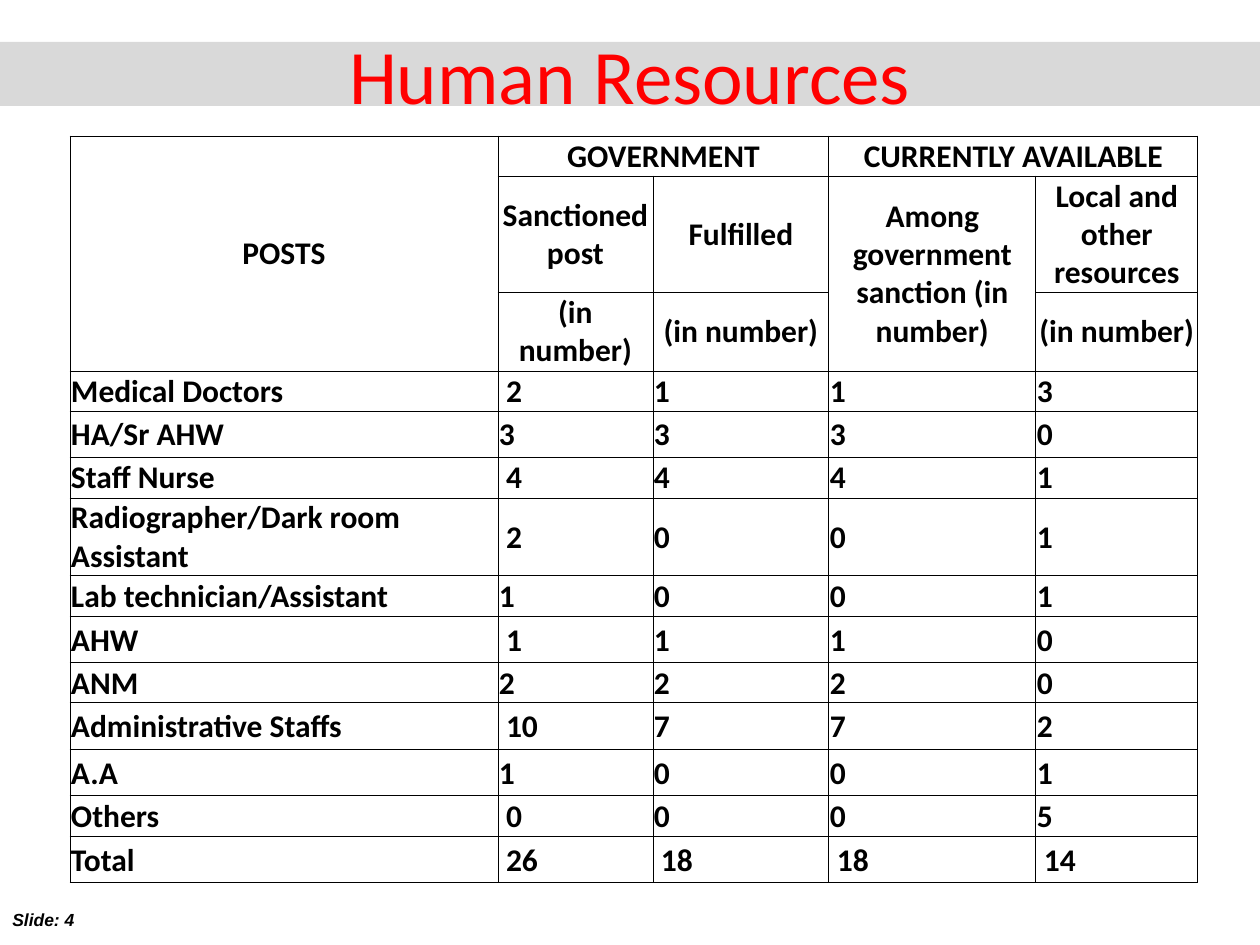
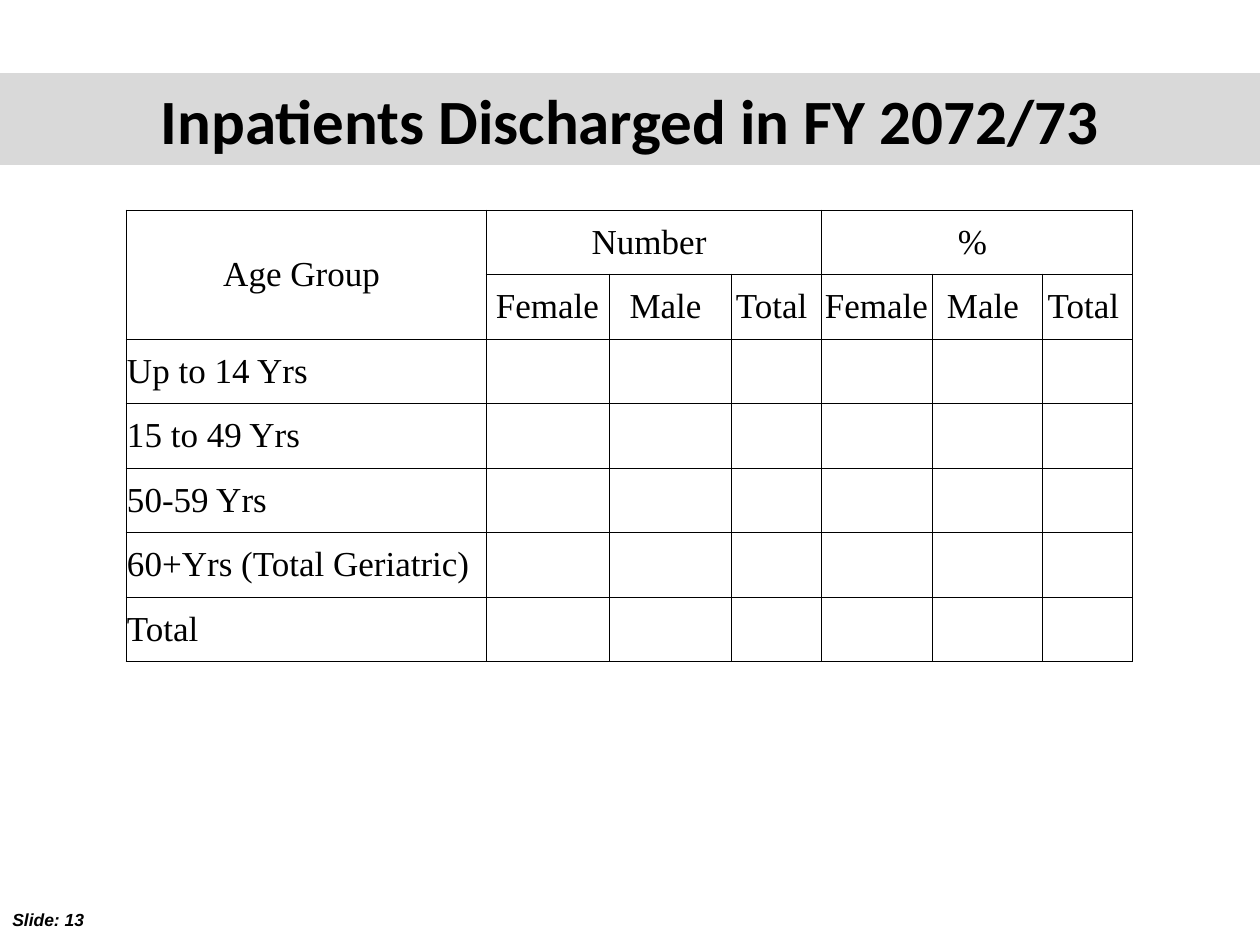
from lxml import etree
from pptx import Presentation
from pptx.dml.color import RGBColor
from pptx.enum.shapes import MSO_SHAPE
from pptx.enum.text import MSO_ANCHOR, PP_ALIGN
from pptx.oxml.ns import qn
from pptx.util import Pt

RECT = MSO_SHAPE.RECTANGLE
MIDDLE = MSO_ANCHOR.MIDDLE
LEFT, CENTER = PP_ALIGN.LEFT, PP_ALIGN.CENTER
PX = 914400 / 126
BLACK, RED, BAND_GRAY = "000000", "FF0000", "D9D9D9"

# Merges are (first row, first column, last row, last column).
SLIDES = [
    dict(
        number=4, title="Human Resources", band=(42, 64),
        title_font=("Calibri", 44, False, RED),
        table_font=("Calibri", 18, True, BLACK),
        left=70, top=136, header_rows=3,
        widths=[428, 155, 176, 207, 162],
        heights=[40, 116, 79, 40, 46, 41, 78, 41, 46, 40, 47, 46, 41, 46],
        merges=[(0, 0, 2, 0), (0, 1, 0, 2), (0, 3, 0, 4), (1, 3, 2, 3)],
        rows=[
            ["POSTS", "GOVERNMENT", "", "CURRENTLY AVAILABLE", ""],
            ["", "Sanctioned post", "Fulfilled",
             "Among government sanction (in number)", "Local and other resources"],
            ["", "(in number)", "(in number)", "", "(in number)"],
            ["Medical Doctors", " 2", "1", "1", "3"],
            ["HA/Sr AHW", "3", "3", "3", "0"],
            ["Staff Nurse", " 4", "4", "4", "1"],
            ["Radiographer/Dark room Assistant", " 2", "0", "0", "1"],
            ["Lab technician/Assistant", "1", "0", "0", "1"],
            ["AHW", " 1", "1", "1", "0"],
            ["ANM", "2", "2", "2", "0"],
            ["Administrative Staffs", " 10", "7", "7", "2"],
            ["A.A", "1", "0", "0", "1"],
            ["Others", " 0", "0", "0", "5"],
            ["Total", " 26", " 18", " 18", " 14"],
        ],
    ),
    dict(
        number=13, title="Inpatients Discharged in FY 2072/73", band=(73, 92),
        title_font=("Calibri", 36, True, BLACK),
        table_font=("Times New Roman", 20, False, BLACK),
        left=126, top=210, header_rows=2,
        widths=[360, 123, 122, 90, 111, 111, 90],
        heights=[64, 65, 64, 65, 64, 65, 64],
        merges=[(0, 0, 1, 0), (0, 1, 0, 3), (0, 4, 0, 6)],
        rows=[
            ["Age Group ", "Number ", "", "", "% ", "", ""],
            ["", "Female", "Male ", "Total ", "Female ", "Male ", "Total "],
            ["Up to 14 Yrs"] + [""] * 6,
            ["15 to 49 Yrs"] + [""] * 6,
            ["50-59 Yrs"] + [""] * 6,
            ["60+Yrs (Total Geriatric)"] + [""] * 6,
            ["Total"] + [""] * 6,
        ],
    ),
]


def px(n):
    return round(n * PX)


def write(tf, text, font, align=LEFT, italic=False):
    name, size, bold, color = font
    tf.text = text
    p = tf.paragraphs[0]
    p.alignment = align
    f = p.font
    f.name, f.size, f.bold, f.italic = name, Pt(size), bold, italic
    f.color.rgb = RGBColor.from_string(color)


prs = Presentation()
prs.slide_width, prs.slide_height = px(1260), px(945)

for page in SLIDES:
    s = prs.slides.add_slide(prs.slide_layouts[6])

    footer = s.shapes.add_textbox(0, px(903), px(116), px(34))
    footer.text_frame.word_wrap = True
    write(footer.text_frame, f"Slide: {page['number']}", ("Arial", 10, True, BLACK), italic=True)

    band_top, band_height = page["band"]
    band = s.shapes.add_shape(RECT, 0, px(band_top), px(1260), px(band_height))
    band.shadow.inherit = False
    band.fill.solid()
    band.fill.fore_color.rgb = RGBColor.from_string(BAND_GRAY)
    band.line.fill.background()
    band.text_frame.vertical_anchor = MIDDLE
    write(band.text_frame, page["title"], page["title_font"], CENTER)

    widths, heights = page["widths"], page["heights"]
    table = s.shapes.add_table(len(heights), len(widths), px(page["left"]), px(page["top"]),
                               px(sum(widths)), px(sum(heights))).table
    table.first_row = table.horz_banding = False
    for column, width in zip(table.columns, widths):
        column.width = px(width)
    for row, height in zip(table.rows, heights):
        row.height = px(height)

    for i, texts in enumerate(page["rows"]):
        for j, text in enumerate(texts):
            cell = table.cell(i, j)
            cell.margin_left = cell.margin_top = cell.margin_right = px(1)
            cell.margin_bottom = 0
            cell.vertical_anchor = MIDDLE
            write(cell.text_frame, text, page["table_font"],
                  CENTER if i < page["header_rows"] else LEFT)
            tc_pr = cell._tc.get_or_add_tcPr()
            for side in ("a:lnL", "a:lnR", "a:lnT", "a:lnB"):
                ln = etree.SubElement(tc_pr, qn(side), w=str(Pt(0.5)))
                fill = etree.SubElement(ln, qn("a:solidFill"))
                etree.SubElement(fill, qn("a:srgbClr"), val=BLACK)
            cell.fill.background()

    for top, left, bottom, right in page["merges"]:
        table.cell(top, left).merge(table.cell(bottom, right))

prs.save("out.pptx")
